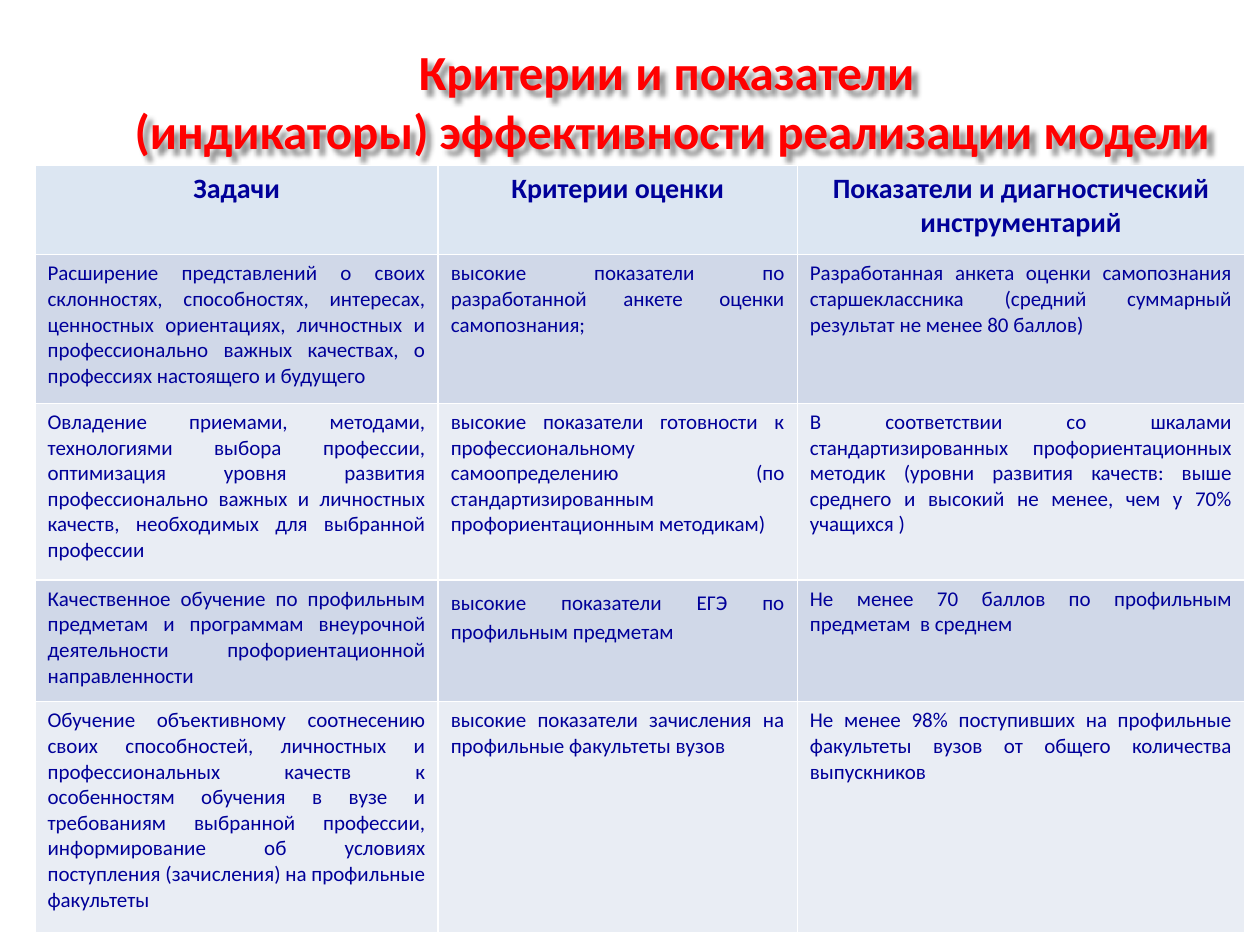
from dataclasses import dataclass

from lxml import etree
from pptx import Presentation
from pptx.dml.color import RGBColor
from pptx.enum import text as t
from pptx.oxml import ns
from pptx.util import Pt

RED = RGBColor(0xFF, 0x00, 0x00)
NAVY = RGBColor(0x00, 0x00, 0x99)
HEAD = RGBColor(0xDC, 0xE6, 0xF2)
DARK = RGBColor(0xD0, 0xD8, 0xE8)
PALE = RGBColor(0xE9, 0xED, 0xF4)
FONT = "Calibri"
COLS = (230.4, 205.2, 255.6)


@dataclass
class Row:
    height: float
    cells: tuple[str, str, str]


ROWS = [
    Row(51, (
        "Задачи",
        "Критерии оценки",
        "Показатели и диагностический инструментарий")),
    Row(85, (
        "Расширение представлений о своих склонностях, способностях, "
        "интересах, ценностных ориентациях, личностных и профессионально "
        "важных качествах, о профессиях настоящего и будущего",
        "высокие показатели по разработанной анкете оценки самопознания;",
        "Разработанная анкета оценки самопознания старшеклассника "
        "(средний суммарный результат не менее 80 баллов)")),
    Row(101, (
        "Овладение приемами, методами, технологиями выбора профессии, "
        "оптимизация уровня развития профессионально важных и личностных "
        "качеств, необходимых для выбранной профессии",
        "высокие показатели готовности к профессиональному "
        "самоопределению (по стандартизированным профориентационным "
        "методикам)",
        "В соответствии со шкалами стандартизированных "
        "профориентационных методик (уровни развития качеств: выше "
        "среднего и высокий не менее, чем у 70% учащихся )")),
    Row(69.5, (
        "Качественное обучение по профильным предметам и программам "
        "внеурочной деятельности профориентационной направленности",
        "высокие показатели ЕГЭ по профильным предметам",
        "Не менее 70 баллов по профильным предметам  в среднем")),
    Row(132, (
        "Обучение объективному соотнесению своих способностей, личностных "
        "и профессиональных качеств к особенностям обучения в вузе и "
        "требованиям выбранной профессии, информирование об условиях "
        "поступления (зачисления) на профильные факультеты ",
        "высокие показатели зачисления на профильные факультеты вузов",
        "Не менее 98% поступивших на профильные факультеты вузов от "
        "общего количества выпускников")),
]
LOOSE = (3, 1)  # row and column of the cell with wider line spacing


def style(para, size: float, color: RGBColor, bold: bool, align) -> None:
    para.alignment = align
    font = para.font
    font.name, font.size, font.bold = FONT, Pt(size), bold
    font.color.rgb = color


def add_glow(shape) -> None:
    """Give the shape's text a soft shadow to the lower right."""
    shape.shadow.inherit = False
    fx = shape.element.spPr.find(ns.qn("a:effectLst"))
    drop = etree.SubElement(fx, ns.qn("a:outerShdw"), blurRad=str(Pt(3)),
                            dist=str(Pt(4)), dir="2700000", algn="tl",
                            rotWithShape="0")
    tint = etree.SubElement(drop, ns.qn("a:srgbClr"), val="000000")
    etree.SubElement(tint, ns.qn("a:alpha"), val="43000")


def add_title(slide) -> None:
    title = slide.shapes.title
    title.left, title.top = Pt(60), Pt(32)
    title.width, title.height = Pt(648), Pt(51)
    frame = title.text_frame
    frame.text = ("Критерии и показатели \v"
                  "(индикаторы) эффективности реализации модели")
    frame.vertical_anchor = t.MSO_ANCHOR.MIDDLE
    frame.auto_size = t.MSO_AUTO_SIZE.NONE
    style(frame.paragraphs[0], 28, RED, True, t.PP_ALIGN.CENTER)
    add_glow(title)


def add_grid(slide) -> None:
    tall = sum(row.height for row in ROWS)
    grid = slide.shapes.add_table(len(ROWS), len(COLS), Pt(20), Pt(94.5),
                                  Pt(sum(COLS)), Pt(tall)).table
    for col, width in zip(grid.columns, COLS):
        col.width = Pt(width)
    for i, row in enumerate(ROWS):
        grid.rows[i].height = Pt(row.height)
        top = i == 0
        fill = HEAD if top else DARK if i % 2 else PALE
        size = 16 if top else 12
        align = t.PP_ALIGN.CENTER if top else t.PP_ALIGN.JUSTIFY
        for j, words in enumerate(row.cells):
            cell = grid.cell(i, j)
            cell.fill.solid()
            cell.fill.fore_color.rgb = fill
            cell.text = words
            para = cell.text_frame.paragraphs[0]
            style(para, size, NAVY, top, align)
            if (i, j) == LOOSE:
                para.line_spacing = 1.15


def main() -> None:
    deck = Presentation()
    deck.slide_width, deck.slide_height = Pt(720), Pt(540)
    slide = deck.slides.add_slide(deck.slide_layouts[5])
    add_title(slide)
    add_grid(slide)
    deck.save("out.pptx")


if __name__ == "__main__":
    main()
